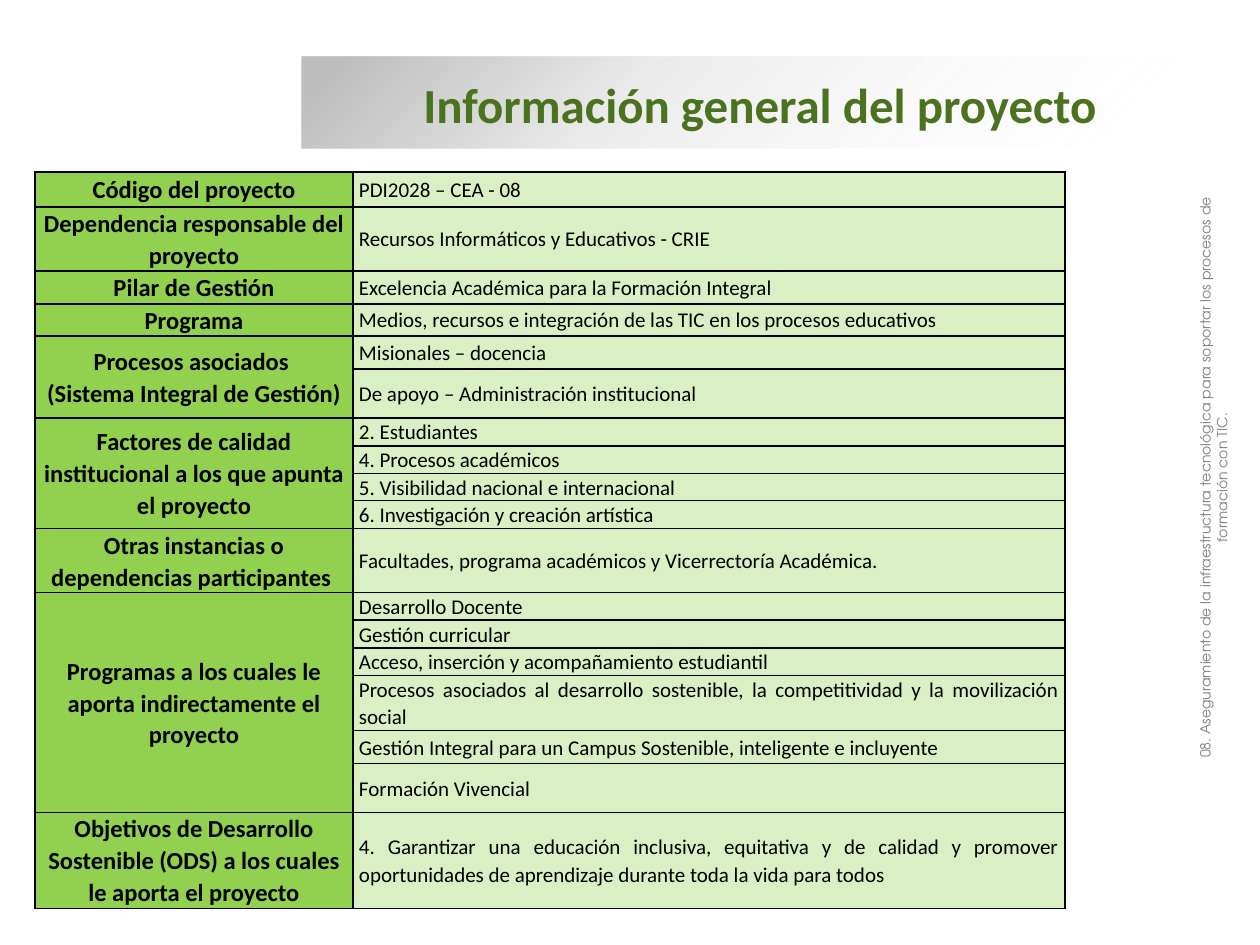
from lxml.etree import SubElement
from pptx import Presentation
from pptx.dml.color import RGBColor
from pptx.enum.shapes import MSO_SHAPE
from pptx.enum.text import MSO_ANCHOR, PP_ALIGN
from pptx.oxml import parse_xml
from pptx.oxml.ns import nsdecls, qn
from pptx.util import Emu, Pt

PX = 914400 // 126
GREEN, PALE, BLACK = "92D050", "DAEFC3", "000000"


def style(para, size, color, bold=False, font="Calibri"):
    for run in para.runs:
        run.font.size = Pt(size)
        run.font.name = font
        run.font.bold = bold
        run.font.color.rgb = RGBColor.from_string(color)


def fill_cell(cell, text, size, bold, align, back, inset):
    """Write a cell with its fill and black borders."""
    cell.text_frame.text = text
    para = cell.text_frame.paragraphs[0]
    para.alignment = align
    para.line_spacing = 1.07
    style(para, size, BLACK, bold)
    cell.vertical_anchor = MSO_ANCHOR.MIDDLE
    cell.margin_left = cell.margin_right = Emu(inset * PX)
    cell.margin_top = cell.margin_bottom = 0
    cell.fill.solid()
    cell.fill.fore_color.rgb = RGBColor.from_string(back)
    props = cell._tc.get_or_add_tcPr()
    for i, side in enumerate(("lnL", "lnR", "lnT", "lnB")):
        props.insert(i, parse_xml(
            f'<a:{side} {nsdecls("a")} w="12700"><a:solidFill>'
            f'<a:srgbClr val="{BLACK}"/></a:solidFill></a:{side}>'))


# Each group: label, then its (row height, text) pairs
groups = [
    ("Código del proyecto", [(35, "PDI2028 – CEA - 08")]),
    ("Dependencia responsable del proyecto",
     [(64, "Recursos Informáticos y Educativos - CRIE")]),
    ("Pilar de Gestión",
     [(33, "Excelencia Académica para la Formación Integral")]),
    ("Programa",
     [(32, "Medios, recursos e integración de las TIC en los procesos educativos")]),
    ("Procesos asociados \v(Sistema Integral de Gestión)",
     [(33, "Misionales – docencia"),
      (49, "De apoyo – Administración institucional")]),
    ("Factores de calidad institucional a los que apunta el proyecto",
     [(28, "2. Estudiantes"),
      (27, "4. Procesos académicos"),
      (27, "5. Visibilidad nacional e internacional"),
      (28, "6. Investigación y creación artística")]),
    ("Otras instancias o dependencias participantes ",
     [(64, "Facultades, programa académicos y Vicerrectoría Académica.")]),
    ("Programas a los cuales le aporta indirectamente el proyecto",
     [(27, "Desarrollo Docente"),
      (28, "Gestión curricular"),
      (27, "Acceso, inserción y acompañamiento estudiantil"),
      (55, "Procesos asociados al desarrollo sostenible, la competitividad "
           "y la movilización social"),
      (33, "Gestión Integral para un Campus Sostenible, inteligente e incluyente"),
      (49, "Formación Vivencial")]),
    ("Objetivos de Desarrollo Sostenible (ODS) a los cuales le aporta el proyecto",
     [(96, "4. Garantizar una educación inclusiva, equitativa y de calidad y "
           "promover oportunidades de aprendizaje durante toda la vida para todos")]),
]

deck = Presentation()
deck.slide_width, deck.slide_height = Emu(1260 * PX), Emu(945 * PX)
shapes = deck.slides.add_slide(deck.slide_layouts[6]).shapes

# Project table
heights = [high for _, rows in groups for high, _ in rows]
table = shapes.add_table(len(heights), 2, 35 * PX, 172 * PX,
                         1030 * PX, sum(heights) * PX).table
table.first_row = table.horz_banding = False
for col, wide in zip(table.columns, (318, 712)):
    col.width = Emu(wide * PX)
for row, high in zip(table.rows, heights):
    row.height = Emu(high * PX)

top = 0
for label, rows in groups:
    for i, (_, text) in enumerate(rows):
        fill_cell(table.cell(top + i, 0), "" if i else label, 14, True,
                  PP_ALIGN.CENTER, GREEN, 5)
        fill_cell(table.cell(top + i, 1), text, 12, False,
                  PP_ALIGN.JUSTIFY, PALE, 6)
    if len(rows) > 1:
        table.cell(top, 0).merge(table.cell(top + len(rows) - 1, 0))
    top += len(rows)

# Title band, fading out to the lower right
band = shapes.add_shape(MSO_SHAPE.RECTANGLE, 302 * PX, 57 * PX, 880 * PX, 91 * PX)
band.shadow.inherit = False
band.line.fill.background()
band.fill.gradient()
band.fill.gradient_angle = 315
stops = band._element.spPr.find(qn("a:gradFill")).find(qn("a:gsLst"))
for stop in list(stops):
    stops.remove(stop)
for pos, color, alpha in ((5, "BFBFBF", 100), (37, "BFBFBF", 31), (100, "FFFFFF", 0)):
    stop = SubElement(stops, qn("a:gs"), pos=str(pos * 1000))
    tint = SubElement(stop, qn("a:srgbClr"), val=color)
    SubElement(tint, qn("a:alpha"), val=str(alpha * 1000))

title = shapes.add_textbox(411 * PX, 68 * PX, 781 * PX, 72 * PX)
frame = title.text_frame
frame.word_wrap = True
frame.vertical_anchor = MSO_ANCHOR.MIDDLE
frame.text = "Información general del proyecto"
style(frame.paragraphs[0], 28, "4B731F", True)

# Project name up the right edge
side = shapes.add_textbox(917 * PX, 446 * PX, 610 * PX, 63 * PX)
side.rotation = 270
frame = side.text_frame
frame.word_wrap = True
frame.text = ("08. Aseguramiento de la infraestructura tecnológica para soportar "
              "los procesos de formación con TIC.")
frame.paragraphs[0].alignment = PP_ALIGN.CENTER
style(frame.paragraphs[0], 8, "808080", font="TeX Gyre Adventor")

deck.save("out.pptx")
